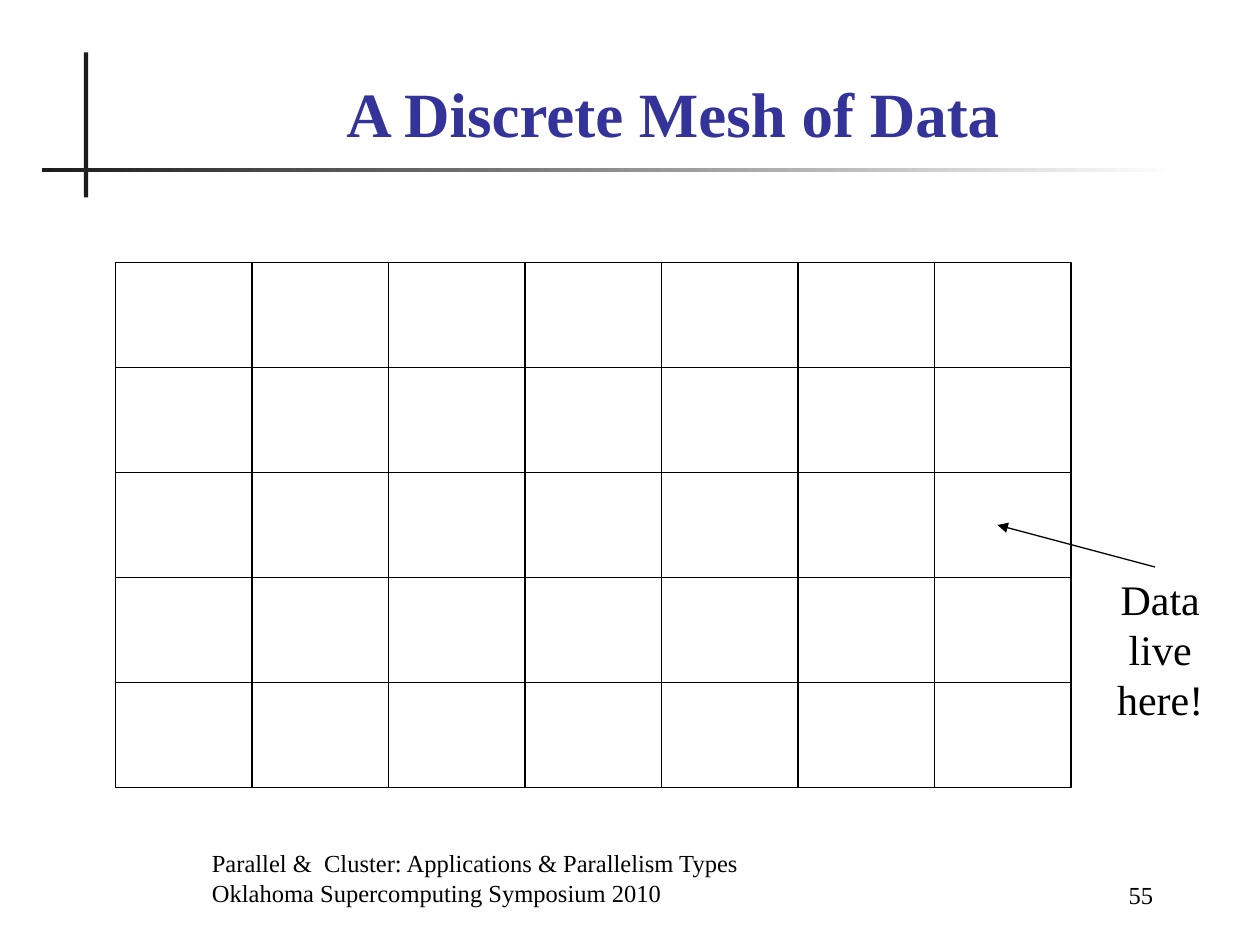
from pptx import Presentation, util as u
from pptx.dml.color import RGBColor
from pptx.enum import shapes, text
from pptx.oxml.ns import qn
from lxml import etree

PX = 7620  # 120 px to the inch
INK, DARK, BLUE, WHITE = "000000", "1C1C1C", "333399", "FFFFFF"
FONT = "Times New Roman"
LEFT, MID, RIGHT = text.PP_ALIGN.LEFT, text.PP_ALIGN.CENTER, text.PP_ALIGN.RIGHT
TOP, BASE = text.MSO_ANCHOR.TOP, text.MSO_ANCHOR.BOTTOM


def px(*nums):
    return [u.Emu(n * PX) for n in nums]


def color(code):
    return RGBColor.from_string(code)


def add_rect(slide, box):
    rect = slide.shapes.add_shape(shapes.MSO_SHAPE.RECTANGLE, *px(*box))
    rect.shadow.inherit = False
    return rect


def add_text(slide, box, words, size, align=LEFT, anchor=TOP, code=INK, bold=False):
    frame = slide.shapes.add_textbox(*px(*box)).text_frame
    frame.word_wrap = True
    frame.vertical_anchor = anchor
    frame.text = words
    for para in frame.paragraphs:
        para.alignment = align
        for run in para.runs:
            font = run.font
            font.name, font.size, font.bold = FONT, u.Pt(size), bold
            font.color.rgb = color(code)


def add_head(slide, x, y):
    # Crossed rules: a solid upright and a fading level one
    post = add_rect(slide, (x + 40, y, 4, 138))
    post.fill.solid()
    post.fill.fore_color.rgb = color(DARK)
    rule = add_rect(slide, (x, y + 110, 1080, 4))
    rule.fill.gradient()
    rule.fill.gradient_angle = 0
    for stop, code in zip(rule.fill.gradient_stops, (DARK, WHITE)):
        stop.color.rgb = color(code)
    for bar in (post, rule):
        bar.line.fill.background()
    # Title
    add_text(slide, (x + 90, y + 10, 1022, 89), "A Discrete Mesh of Data",
             36, MID, BASE, BLUE, True)


def add_mesh(slide, x, y, cols, rows, wide, high):
    for row in range(rows):
        for col in range(cols):
            cell = add_rect(slide, (x + col * wide, y + row * high, wide, high))
            cell.fill.background()
            cell.line.color.rgb = color(INK)
            cell.line.width = u.Pt(0.75)


def add_note(slide, x, y):
    # Arrow into the mesh
    arrow = slide.shapes.add_connector(
        shapes.MSO_CONNECTOR.STRAIGHT, *px(x + 60, y, x - 90, y - 40))
    arrow.line.color.rgb = color(INK)
    arrow.line.width = u.Pt(0.75)
    etree.SubElement(arrow.line._get_or_add_ln(), qn("a:tailEnd"), type="triangle")
    etree.SubElement(arrow._element.spPr, qn("a:effectLst"))
    # Label under its tail
    add_text(slide, (x, y, 130, 156), "Data live here!", 24, MID)


def add_foot(slide, x, y):
    add_text(slide, (x, y, 730, 60),
             "Parallel &  Cluster: Applications & Parallelism Types\n"
             "Oklahoma Supercomputing Symposium 2010", 14, anchor=BASE)
    add_text(slide, (x + 750, y + 2, 170, 60), "55", 14, RIGHT, BASE)


def main():
    deck = Presentation()
    deck.slide_width, deck.slide_height = px(1200, 900)
    slide = deck.slides.add_slide(deck.slide_layouts[6])
    add_head(slide, 40, 50)
    add_mesh(slide, 110, 250, 7, 5, 130, 100)
    add_note(slide, 1040, 540)
    add_foot(slide, 190, 810)
    deck.save("out.pptx")


if __name__ == "__main__":
    main()
